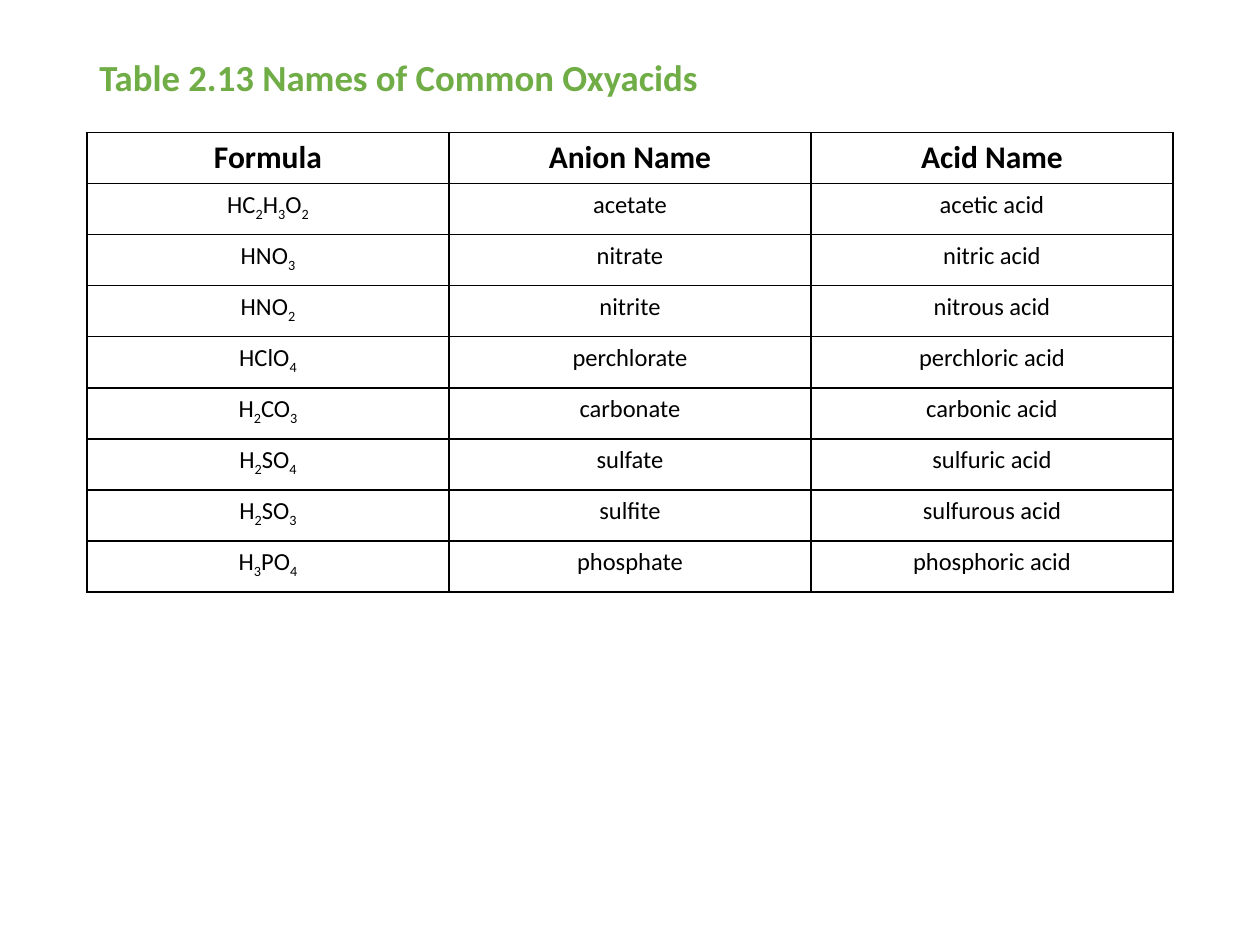
"""Build a slide with a table of common oxyacids, their anions and their names."""
from itertools import groupby

from lxml.etree import SubElement
from pptx import Presentation
from pptx.dml.color import RGBColor
from pptx.enum.text import MSO_ANCHOR, PP_ALIGN
from pptx.oxml.ns import qn
from pptx.util import Inches, Pt

GREEN = RGBColor(0x70, 0xAD, 0x47)
BLACK = RGBColor(0x00, 0x00, 0x00)

OXYACIDS = [
    ("Formula", "Anion Name", "Acid Name"),
    ("HC2H3O2", "acetate", "acetic acid"),
    ("HNO3", "nitrate", "nitric acid"),
    ("HNO2", "nitrite", "nitrous acid"),
    ("HClO4", "perchlorate", "perchloric acid"),
    ("H2CO3", "carbonate", "carbonic acid"),
    ("H2SO4", "sulfate", "sulfuric acid"),
    ("H2SO3", "sulfite", "sulfurous acid"),
    ("H3PO4", "phosphate", "phosphoric acid"),
]


def style_font(paragraph, size, color, bold):
    paragraph.font.name = "Calibri"
    paragraph.font.size = Pt(size)
    paragraph.font.color.rgb = color
    paragraph.font.bold = bold


def add_borders(cell):
    properties = cell._tc.get_or_add_tcPr()
    for side in ("a:lnL", "a:lnR", "a:lnT", "a:lnB"):
        line = SubElement(properties, qn(side), w=str(Pt(1)))
        fill = SubElement(line, qn("a:solidFill"))
        SubElement(fill, qn("a:srgbClr"), val=str(BLACK))


prs = Presentation()
prs.slide_width = Inches(10)
prs.slide_height = Inches(7.5)
slide = prs.slides.add_slide(prs.slide_layouts[6])

title = slide.shapes.add_textbox(
    Inches(0.69), Inches(0.4), Inches(8.62), Inches(0.46)).text_frame
title.word_wrap = True
title.vertical_anchor = MSO_ANCHOR.MIDDLE
heading = title.paragraphs[0]
heading.text = "Table 2.13 Names of Common Oxyacids"
heading.line_spacing = 0.9
style_font(heading, 21, GREEN, True)

acid_table = slide.shapes.add_table(
    len(OXYACIDS), len(OXYACIDS[0]),
    Inches(0.69), Inches(1.05), Inches(8.62), Inches(3.65)).table
acid_table.first_row = False
acid_table.horz_banding = False

for row, entries in enumerate(OXYACIDS):
    for column, entry in enumerate(entries):
        cell = acid_table.cell(row, column)
        add_borders(cell)
        cell.fill.background()
        paragraph = cell.text_frame.paragraphs[0]
        paragraph.alignment = PP_ALIGN.CENTER
        style_font(paragraph, 14 if row else 18, BLACK, row == 0)
        for is_subscript, characters in groupby(entry, str.isdigit):
            run = paragraph.add_run()
            run.text = "".join(characters)
            if is_subscript:
                run.font._element.set("baseline", "-25000")

prs.save("out.pptx")
